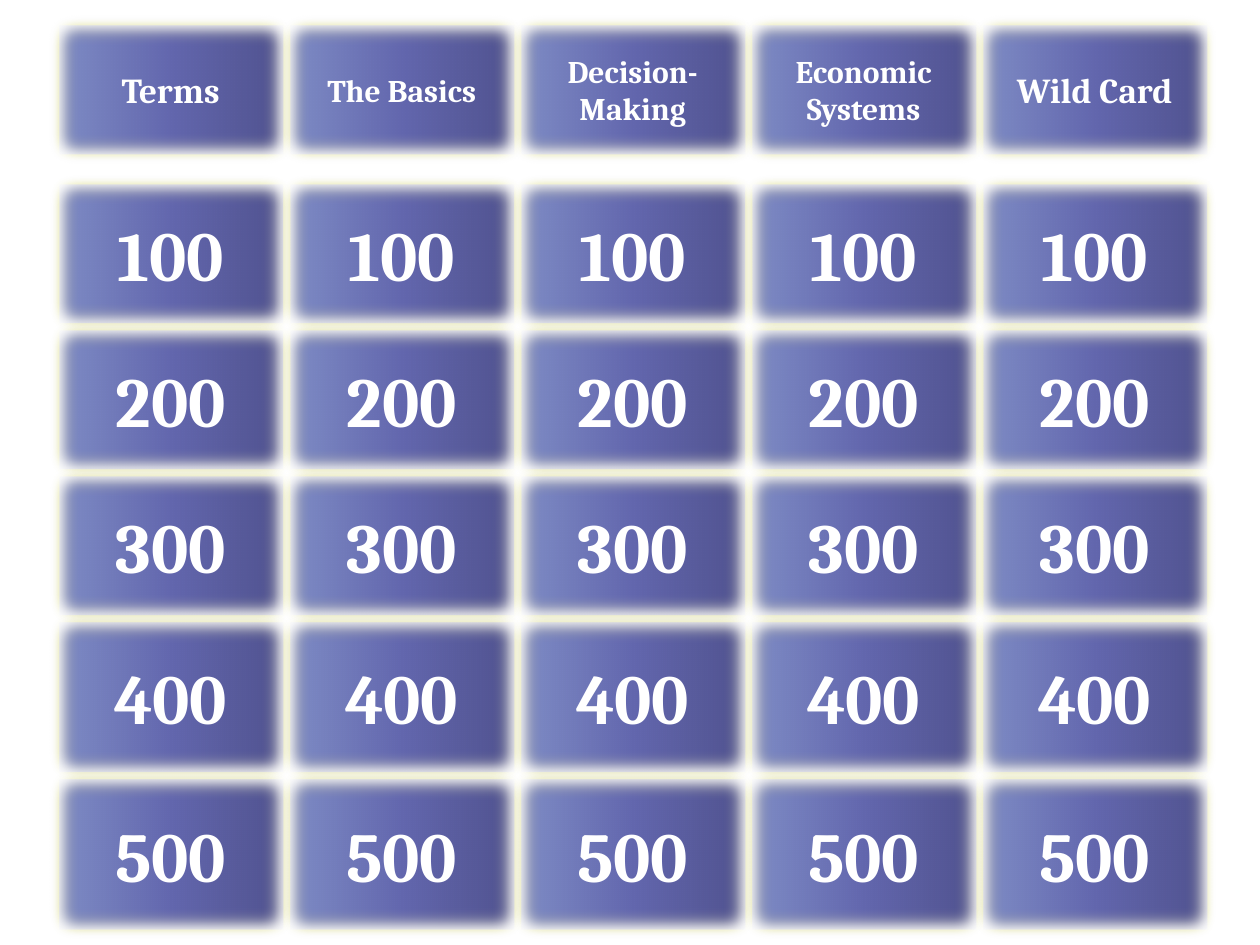
from dataclasses import dataclass
from itertools import accumulate

from lxml.etree import SubElement
from pptx import Presentation
from pptx.dml.color import RGBColor
from pptx.enum.shapes import MSO_SHAPE
from pptx.enum.text import MSO_ANCHOR, PP_ALIGN
from pptx.oxml.ns import qn
from pptx.util import Pt

WHITE = RGBColor(0xFF, 0xFF, 0xFF)
YELLOW = RGBColor(0xFF, 0xFF, 0x00)
SHADOW = RGBColor(0x00, 0x00, 0x00)
GRADIENT = (
    (0, RGBColor(0x80, 0x8E, 0xC7)),
    (50, RGBColor(0x63, 0x67, 0xAF)),
    (100, RGBColor(0x50, 0x52, 0x8E)),
)
FONT = "Cambria"

LEFT, PITCH, WIDTH = 31.5, 132, 132
HEADER_TOP, HEADER_HEIGHT = 12.25, 77.75
GRID_TOP = 103
ROW_HEIGHTS = (83.5, 83.5, 83.5, 89.5, 90)


@dataclass
class Tile:
    text: str
    column: int
    top: float
    height: float
    size: float = 40
    wrap: bool = False


def add_color(parent, color: RGBColor):
    return SubElement(parent, qn("a:srgbClr"), val=str(color))


def set_gradient(sp) -> None:
    sp.fill.gradient()
    sp.fill.gradient_angle = 0
    stops = sp._element.spPr.find(qn("a:gradFill")).find(qn("a:gsLst"))
    for stop in list(stops):
        stops.remove(stop)
    for percent, color in GRADIENT:
        add_color(SubElement(stops, qn("a:gs"), pos=str(percent * 1000)), color)


def set_effects(sp) -> None:
    sp.shadow.inherit = False
    effects = sp._element.spPr.find(qn("a:effectLst"))
    shadow = SubElement(effects, qn("a:outerShdw"), blurRad=str(Pt(5)),
                        dist="0", dir="0", algn="ctr", rotWithShape="0")
    SubElement(add_color(shadow, SHADOW), qn("a:alpha"), val="40000")
    SubElement(effects, qn("a:softEdge"), rad="112500")


def draw_tile(slide, tile: Tile) -> None:
    sp = slide.shapes.add_shape(
        MSO_SHAPE.ACTION_BUTTON_CUSTOM, Pt(LEFT + PITCH * tile.column),
        Pt(tile.top), Pt(WIDTH), Pt(tile.height))
    set_gradient(sp)
    sp.line.color.rgb = YELLOW
    sp.line.width = Pt(4.5)
    set_effects(sp)
    tf = sp.text_frame
    tf.text = tile.text
    tf.word_wrap = tile.wrap
    tf.vertical_anchor = MSO_ANCHOR.MIDDLE
    p = tf.paragraphs[0]
    p.alignment = PP_ALIGN.CENTER
    font = p.runs[0].font
    font.name = FONT
    font.size = Pt(tile.size)
    font.bold = True
    font.color.rgb = WHITE


def main() -> None:
    prs = Presentation()
    prs.slide_width, prs.slide_height = Pt(720), Pt(540)
    slide = prs.slides.add_slide(prs.slide_layouts[6])

    categories = (("Terms", 20), ("The Basics", 18), ("Decision-Making", 18),
                  ("Economic Systems", 18), ("Wild Card", 20))
    for column, (name, size) in enumerate(categories):
        draw_tile(slide, Tile(name, column, HEADER_TOP, HEADER_HEIGHT,
                              size, wrap=name != "Wild Card"))

    tops = accumulate(ROW_HEIGHTS, initial=GRID_TOP)
    for row, (top, height) in enumerate(zip(tops, ROW_HEIGHTS), start=1):
        for column in range(len(categories)):
            draw_tile(slide, Tile(str(row * 100), column, top, height))

    prs.save("out.pptx")


if __name__ == "__main__":
    main()
